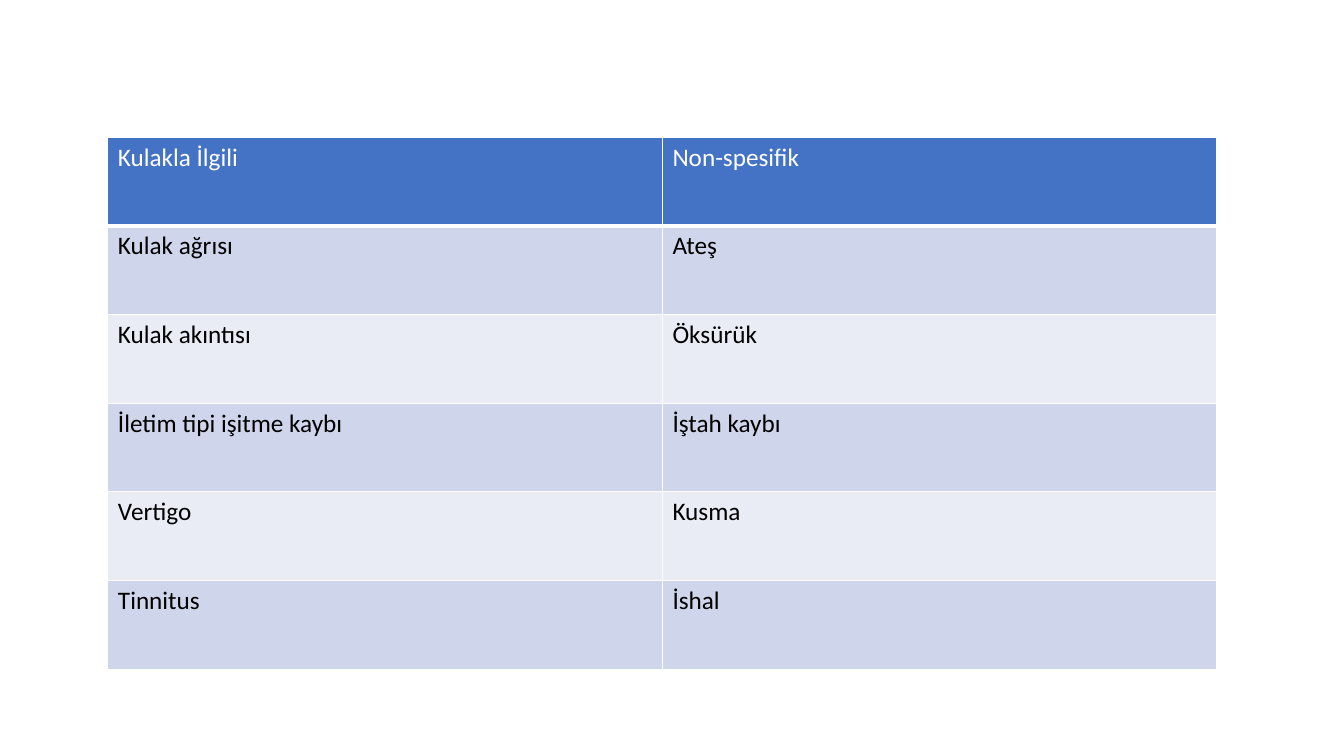
from dataclasses import dataclass

from lxml.etree import SubElement
from pptx import Presentation
from pptx.dml.color import RGBColor
from pptx.oxml.ns import qn
from pptx.util import Inches, Pt

SYMPTOMS = [
    ("Kulakla İlgili", "Non-spesifik"),
    ("Kulak ağrısı", "Ateş"),
    ("Kulak akıntısı", "Öksürük"),
    ("İletim tipi işitme kaybı", "İştah kaybı"),
    ("Vertigo", "Kusma"),
    ("Tinnitus", "İshal"),
]
LEFT, TOP = 1.07, 1.36
COLUMN_WIDTH, ROW_HEIGHT = 5.5, 0.88
HEADER_BORDERS = {"lnL": 1, "lnR": 1, "lnT": 1, "lnB": 3}


@dataclass(frozen=True)
class Theme:
    font: str = "Calibri"
    size: int = 18
    header_fill: str = "4472C4"
    header_text: str = "FFFFFF"
    body_fills: tuple = ("CFD5EA", "E9EBF5")
    body_text: str = "000000"
    border: str = "FFFFFF"


THEME = Theme()


def add_borders(cell, widths):
    properties = cell._tc.get_or_add_tcPr()
    for side, width in widths.items():
        line = SubElement(properties, qn(f"a:{side}"), w=str(Pt(width)))
        fill = SubElement(line, qn("a:solidFill"))
        SubElement(fill, qn("a:srgbClr"), val=THEME.border)


def format_cell(cell, text, fill, color):
    cell.fill.solid()
    cell.fill.fore_color.rgb = RGBColor.from_string(fill)
    run = cell.text_frame.paragraphs[0].add_run()
    run.text = text
    run.font.name = THEME.font
    run.font.size = Pt(THEME.size)
    run.font.bold = False
    run.font.color.rgb = RGBColor.from_string(color)


def add_symptom_table(slide):
    row_count, column_count = len(SYMPTOMS), len(SYMPTOMS[0])
    table = slide.shapes.add_table(
        row_count, column_count, Inches(LEFT), Inches(TOP),
        Inches(COLUMN_WIDTH * column_count), Inches(ROW_HEIGHT * row_count),
    ).table
    for row_index, texts in enumerate(SYMPTOMS):
        is_header = row_index == 0
        fill = THEME.header_fill if is_header else THEME.body_fills[(row_index - 1) % 2]
        color = THEME.header_text if is_header else THEME.body_text
        for column_index, text in enumerate(texts):
            cell = table.cell(row_index, column_index)
            if is_header:
                add_borders(cell, HEADER_BORDERS)
            format_cell(cell, text, fill, color)


def main():
    presentation = Presentation()
    presentation.slide_width = Inches(13.33)
    presentation.slide_height = Inches(7.5)
    slide = presentation.slides.add_slide(presentation.slide_layouts.get_by_name("Blank"))
    add_symptom_table(slide)
    presentation.save("out.pptx")


if __name__ == "__main__":
    main()
